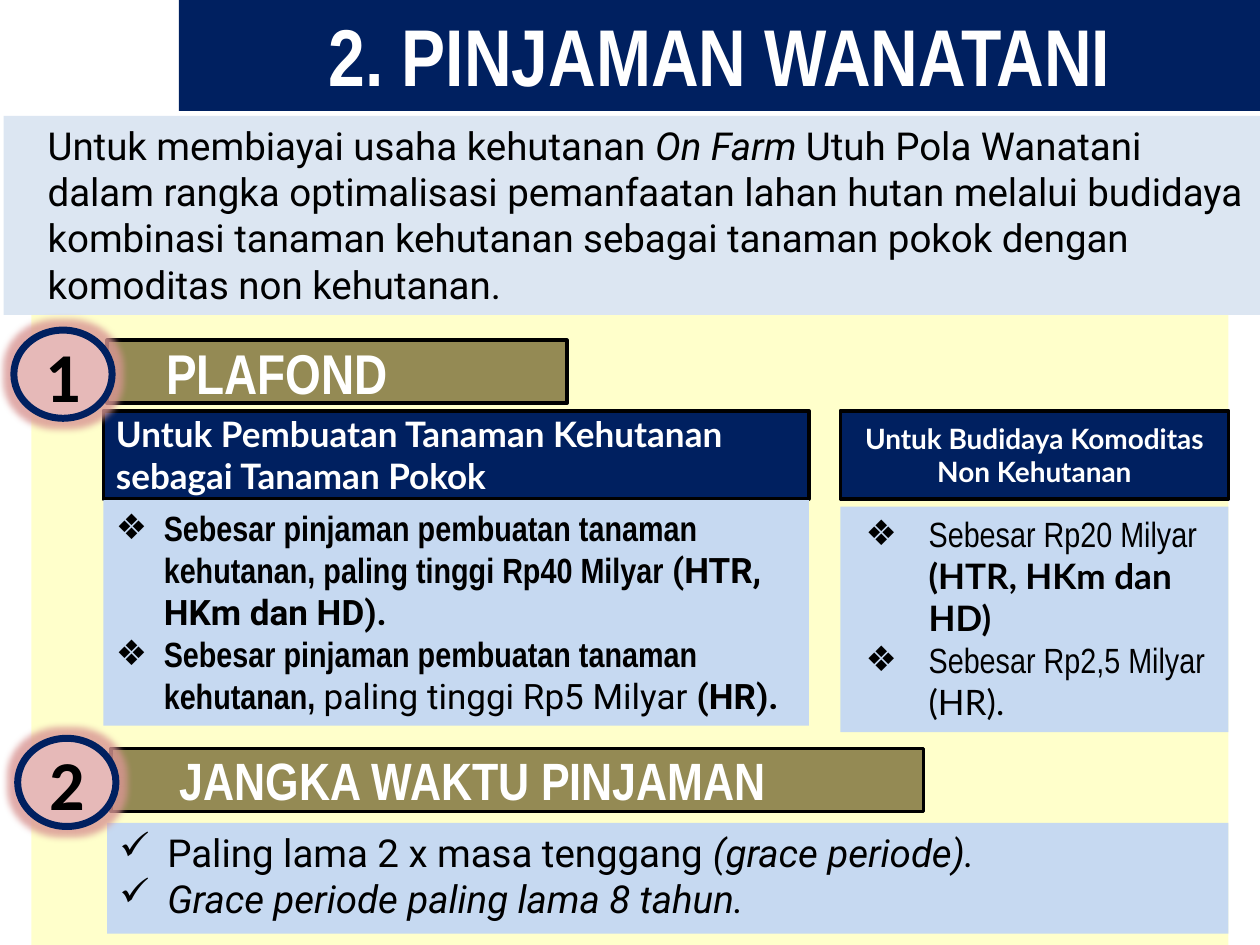
from dataclasses import dataclass

from lxml import etree
from pptx import Presentation
from pptx.dml import color
from pptx.enum import shapes, text
from pptx.oxml import ns
from pptx.util import Inches, Pt


@dataclass(frozen=True)
class Theme:
    navy: str = "002060"
    olive: str = "948A54"
    sky: str = "C6D9F1"
    pale: str = "DCE6F2"
    cream: str = "FFFF99"
    rose: str = "E6B9B8"
    glow: str = "D99694"
    black: str = "000000"
    white: str = "FFFFFF"
    narrow: str = "Arial Narrow"
    heading: str = "Lato"
    reading: str = "Roboto"
    numeral: str = "Calibri"
    title_size: int = 46
    number_size: int = 40
    reading_size: int = 22
    list_size: int = 20
    minor_size: int = 16


THEME = Theme()
LEFT, CENTER = text.PP_ALIGN.LEFT, text.PP_ALIGN.CENTER
TOP, MIDDLE = text.MSO_ANCHOR.TOP, text.MSO_ANCHOR.MIDDLE


def rgb(value):
    return color.RGBColor.from_string(value)


def place(part, box):
    part.left, part.top, part.width, part.height = map(Inches, box)


def paint(part, fill, outline=None, weight=2):
    part.fill.solid()
    part.fill.fore_color.rgb = rgb(fill)
    if outline:
        part.line.color.rgb = rgb(outline)
        part.line.width = Pt(weight)
    else:
        part.line.fill.background()


def draw(slide, box, fill, outline=None, weight=2, kind=shapes.MSO_SHAPE.RECTANGLE):
    part = slide.shapes.add_shape(kind, *map(Inches, box))
    part.shadow.inherit = False
    paint(part, fill, outline, weight)
    return part


def write(part, paragraphs, size, ink, align=LEFT, anchor=TOP, margin=0, hanging=0, bullet=None):
    frame = part.text_frame
    frame.word_wrap = True
    frame.auto_size = text.MSO_AUTO_SIZE.NONE
    frame.vertical_anchor = anchor
    for index, pieces in enumerate(paragraphs):
        paragraph = frame.add_paragraph() if index else frame.paragraphs[0]
        paragraph.alignment = align
        paragraph.space_before = Pt(0)
        properties = paragraph._p.get_or_add_pPr()
        properties.set("marL", str(Inches(margin)))
        properties.set("indent", str(-Inches(hanging)))
        mark = etree.SubElement(properties, ns.qn("a:buChar" if bullet else "a:buNone"))
        if bullet:
            mark.set("char", bullet)
        for words, face, style in pieces:
            run = paragraph.add_run()
            run.text = words
            run.font.name = face
            run.font.size = Pt(size)
            run.font.bold = "b" in style
            run.font.italic = "i" in style
            run.font.color.rgb = rgb(ink)


def add_backdrop(slide, box):
    backdrop = draw(slide, box, THEME.cream)
    tint = backdrop._element.spPr.find(".//" + ns.qn("a:srgbClr"))
    etree.SubElement(tint, ns.qn("a:alpha")).set("val", "50000")
    slide.shapes._spTree.insert(2, backdrop._element)


def add_title(title, box):
    place(title, box)
    paint(title, THEME.navy)
    write(title, [[("2. PINJAMAN WANATANI", THEME.narrow, "b")]],
          THEME.title_size, THEME.white, CENTER)


def add_intro(slide, box):
    face = THEME.reading
    intro = draw(slide, box, THEME.pale)
    write(intro, [[
        ("Untuk membiayai usaha kehutanan ", face, ""),
        ("On Farm ", face, "i"),
        ("Utuh Pola Wanatani dalam rangka optimalisasi pemanfaatan lahan hutan melalui "
         "budidaya kombinasi tanaman kehutanan sebagai tanaman pokok dengan komoditas "
         "non kehutanan.", face, ""),
    ]], THEME.reading_size, THEME.black, margin=0.25)


def add_section(slide, box, number, label, size, margin):
    left, top, width, height = box
    banner = draw(slide, box, THEME.olive, THEME.black)
    write(banner, [[(label, THEME.narrow, "b")]], size, THEME.white,
          anchor=MIDDLE, margin=margin)
    badge = draw(slide, (left - 0.74, top - 0.08, 0.78, 0.7), THEME.rose, THEME.navy, 4,
                 shapes.MSO_SHAPE.OVAL)
    effects = badge._element.spPr.find(ns.qn("a:effectLst"))
    glow = etree.SubElement(effects, ns.qn("a:glow"), rad=str(Inches(0.11)))
    tint = etree.SubElement(glow, ns.qn("a:srgbClr"), val=THEME.glow)
    etree.SubElement(tint, ns.qn("a:alpha")).set("val", "80000")
    write(badge, [[(number, THEME.numeral, "b")]], THEME.number_size, THEME.black,
          CENTER, MIDDLE)


def add_ceiling(heading, limits, box, label, label_size, align, items, gap, indent):
    left, top, width, height = box
    heading_height = 0.7
    limits_top = heading_height + gap
    place(heading, (left, top, width, heading_height))
    paint(heading, THEME.navy, THEME.black)
    write(heading, [[(label, THEME.heading, "b")]], label_size, THEME.white, align, MIDDLE)
    place(limits, (left, top + limits_top, width, height - limits_top))
    paint(limits, THEME.sky)
    write(limits, items, THEME.list_size, THEME.black, margin=indent[0],
          hanging=indent[1], bullet="❖")


def add_terms(slide, box):
    face = THEME.reading
    terms = draw(slide, box, THEME.sky)
    write(terms, [
        [("Paling lama 2 x masa tenggang ", face, ""), ("(grace periode).", face, "i")],
        [("Grace periode paling lama 8 tahun.", face, "i")],
    ], THEME.reading_size, THEME.black, margin=0.38, hanging=0.38, bullet="✓")


def main():
    deck = Presentation()
    deck.slide_width, deck.slide_height = Inches(10), Inches(7.5)
    slide = deck.slides.add_slide(deck.slide_layouts.get_by_name("Comparison"))
    title, forest_heading, forest_limits, crop_heading, crop_limits = slide.placeholders

    add_backdrop(slide, (0.25, 2.34, 9.5, 5.17))
    add_title(title, (1.42, 0, 8.58, 0.88))
    add_intro(slide, (0.03, 0.92, 9.97, 1.58))

    narrow, reading, lato = THEME.narrow, THEME.reading, THEME.heading
    loan = "Sebesar pinjaman pembuatan tanaman kehutanan, "
    add_ceiling(forest_heading, forest_limits, (0.82, 3.26, 5.6, 2.5),
                "Untuk Pembuatan Tanaman Kehutanan sebagai Tanaman Pokok",
                THEME.list_size, LEFT, [
                    [(loan + "paling tinggi Rp40 Milyar ", narrow, "b"),
                     ("(HTR, HKm dan HD).", reading, "b")],
                    [(loan, narrow, "b"), ("paling tinggi Rp5 Milyar ", reading, ""),
                     ("(HR).", reading, "b")],
                ], 0.01, (0.38, 0.38))
    add_ceiling(crop_heading, crop_limits, (6.67, 3.26, 3.08, 2.55),
                "Untuk Budidaya Komoditas Non Kehutanan",
                THEME.minor_size, CENTER, [
                    [("Sebesar Rp20 Milyar ", narrow, ""), ("(HTR, HKm dan HD)", lato, "b")],
                    [("Sebesar Rp2,5 Milyar ", narrow, ""), ("(HR).", lato, "")],
                ], 0.06, (0.6, 0.5))

    add_section(slide, (0.85, 2.7, 3.65, 0.5), "1", "PLAFOND", 32, 0.37)
    add_terms(slide, (0.85, 6.53, 8.9, 0.88))
    add_section(slide, (0.88, 5.94, 6.45, 0.5), "2", "JANGKA WAKTU PINJAMAN", 30, 0.45)
    deck.save("out.pptx")


if __name__ == "__main__":
    main()
